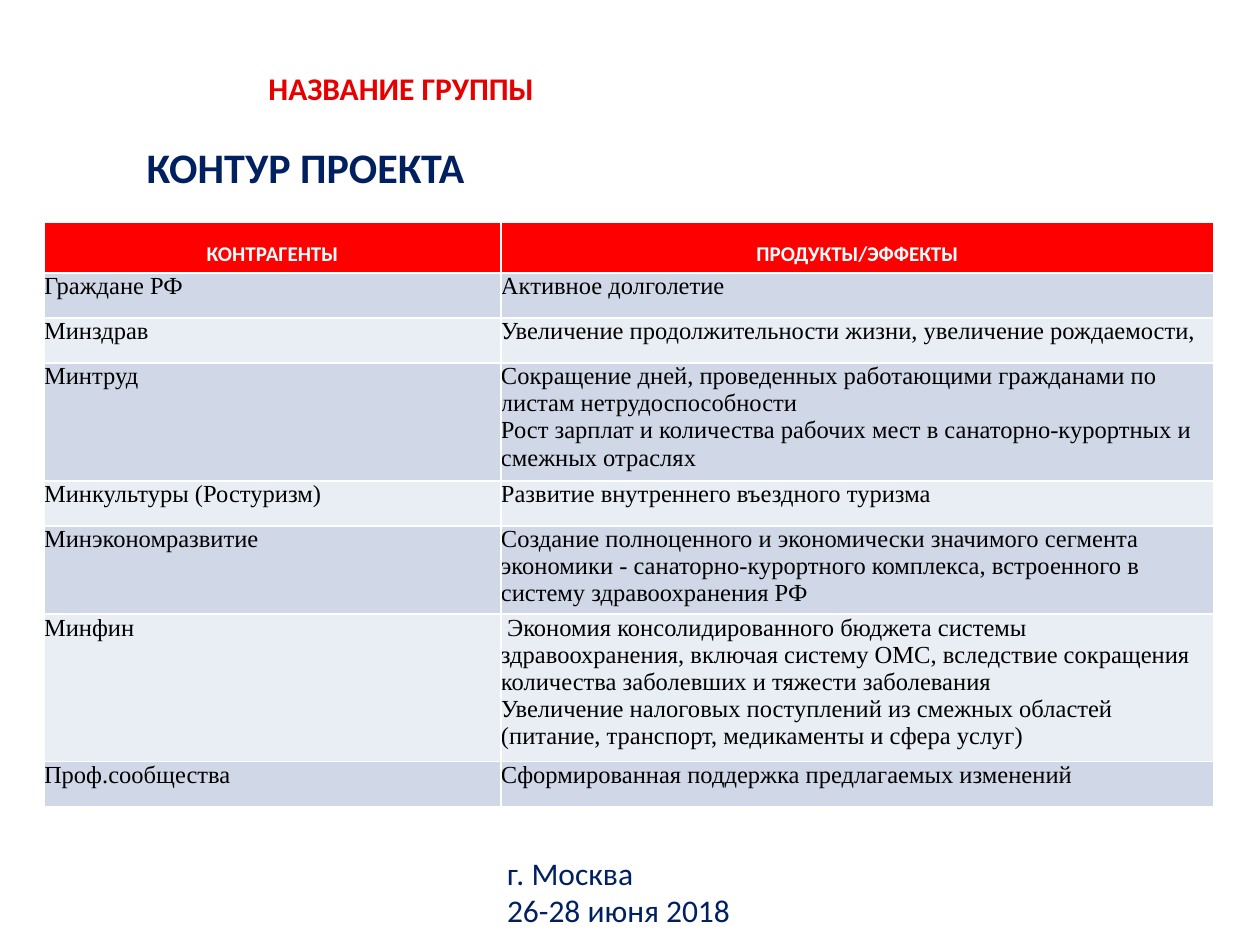
from pptx import Presentation
from pptx.dml.color import RGBColor
from pptx.enum.text import MSO_ANCHOR, MSO_AUTO_SIZE, PP_ALIGN
from pptx.util import Pt

SCALE = 914400 / 126
COLORS = {
    "red": "E60000", "navy": "002060", "head": "FF0000",
    "white": "FFFFFF", "black": "000000", "dark": "D0D8E8", "light": "E9EDF4",
}
HEADS = ["КОНТРАГЕНТЫ", "ПРОДУКТЫ/ЭФФЕКТЫ"]
WIDTHS = [457, 713]
ROWS = [
    (45, "Граждане РФ", "Активное долголетие"),
    (45, "Минздрав", "Увеличение продолжительности жизни, увеличение рождаемости,"),
    (118, "Минтруд",
     "Сокращение дней, проведенных работающими гражданами по листам нетрудоспособности\n"
     "Рост зарплат и количества рабочих мест в санаторно-курортных и смежных отраслях"),
    (45, "Минкультуры (Ростуризм)", "Развитие внутреннего въездного туризма"),
    (88, "Минэкономразвитие",
     "Создание полноценного и экономически значимого сегмента экономики - "
     "санаторно-курортного комплекса, встроенного в систему здравоохранения РФ"),
    (147, "Минфин",
     " Экономия консолидированного бюджета системы здравоохранения, включая систему ОМС, "
     "вследствие сокращения количества заболевших и тяжести заболевания\n"
     "Увеличение налоговых поступлений из смежных областей "
     "(питание, транспорт, медикаменты и сфера услуг)"),
    (45, "Проф.сообщества", "Сформированная поддержка предлагаемых изменений"),
]


def px(n):
    """Turn pixels into EMU."""
    return round(n * SCALE)


def color(name):
    """Look up a colour by name."""
    return RGBColor.from_string(COLORS[name])


def write(frame, text, size=18, font="Calibri", ink="navy", bold=False,
          align=PP_ALIGN.LEFT, lead=None):
    """Fill a text frame, one paragraph a line."""
    frame.word_wrap = True
    for i, line in enumerate(text.split("\n")):
        para = frame.add_paragraph() if i else frame.paragraphs[0]
        para.alignment = align
        if lead:
            para.line_spacing = lead
        run = para.add_run()
        run.text = line
        run.font.size = Pt(size)
        run.font.name = font
        run.font.bold = bold
        run.font.color.rgb = color(ink)


def add_title(slide, text, x, y, w, h):
    """Place and format the title placeholder."""
    title = slide.shapes.title
    title.left, title.top, title.width, title.height = map(px, (x, y, w, h))
    frame = title.text_frame
    frame.auto_size = MSO_AUTO_SIZE.NONE
    frame.vertical_anchor = MSO_ANCHOR.TOP
    write(frame, text, size=24, bold=True)


def add_text(slide, text, x, y, w, h, inset=None, **style):
    """Add a text box centred on its height."""
    frame = slide.shapes.add_textbox(*map(px, (x, y, w, h))).text_frame
    frame.vertical_anchor = MSO_ANCHOR.MIDDLE
    if inset is not None:
        frame.margin_left = px(inset)
    write(frame, text, **style)


def fill_cell(cell, text, fill, **style):
    """Set the fill and text of a table cell."""
    cell.fill.solid()
    cell.fill.fore_color.rgb = color(fill)
    write(cell.text_frame, text, **style)


def add_grid(slide, x, y, head):
    """Add the table of parties and effects."""
    high = [head] + [row[0] for row in ROWS]
    size = (x, y, sum(WIDTHS), sum(high))
    table = slide.shapes.add_table(len(high), len(WIDTHS), *map(px, size)).table
    for col, wide in zip(table.columns, WIDTHS):
        col.width = px(wide)
    for row, tall in zip(table.rows, high):
        row.height = px(tall)
    for c, text in enumerate(HEADS):
        fill_cell(table.cell(0, c), text, "head", size=12, ink="white",
                  bold=True, align=PP_ALIGN.CENTER, lead=1.5)
    for r, (_, *texts) in enumerate(ROWS, 1):
        for c, text in enumerate(texts):
            cell = table.cell(r, c)
            cell.margin_left = cell.margin_right = 0
            cell.margin_top = cell.margin_bottom = 0
            fill_cell(cell, text, "dark" if r % 2 else "light", size=14,
                      font="Times New Roman", ink="black")


def main():
    """Build and save the slide."""
    deck = Presentation()
    deck.slide_width, deck.slide_height = px(1260), px(945)
    slide = deck.slides.add_slide(deck.slide_layouts[5])
    add_text(slide, "НАЗВАНИЕ ГРУППЫ", 256, 63, 901, 49, ink="red", bold=True)
    add_title(slide, "КОНТУР ПРОЕКТА", 134, 135, 630, 63)
    add_grid(slide, 44, 222, 51)
    add_text(slide, "г. Москва\n26-28 июня 2018", 16, 854, 1218, 75, inset=491)
    deck.save("out.pptx")


if __name__ == "__main__":
    main()
